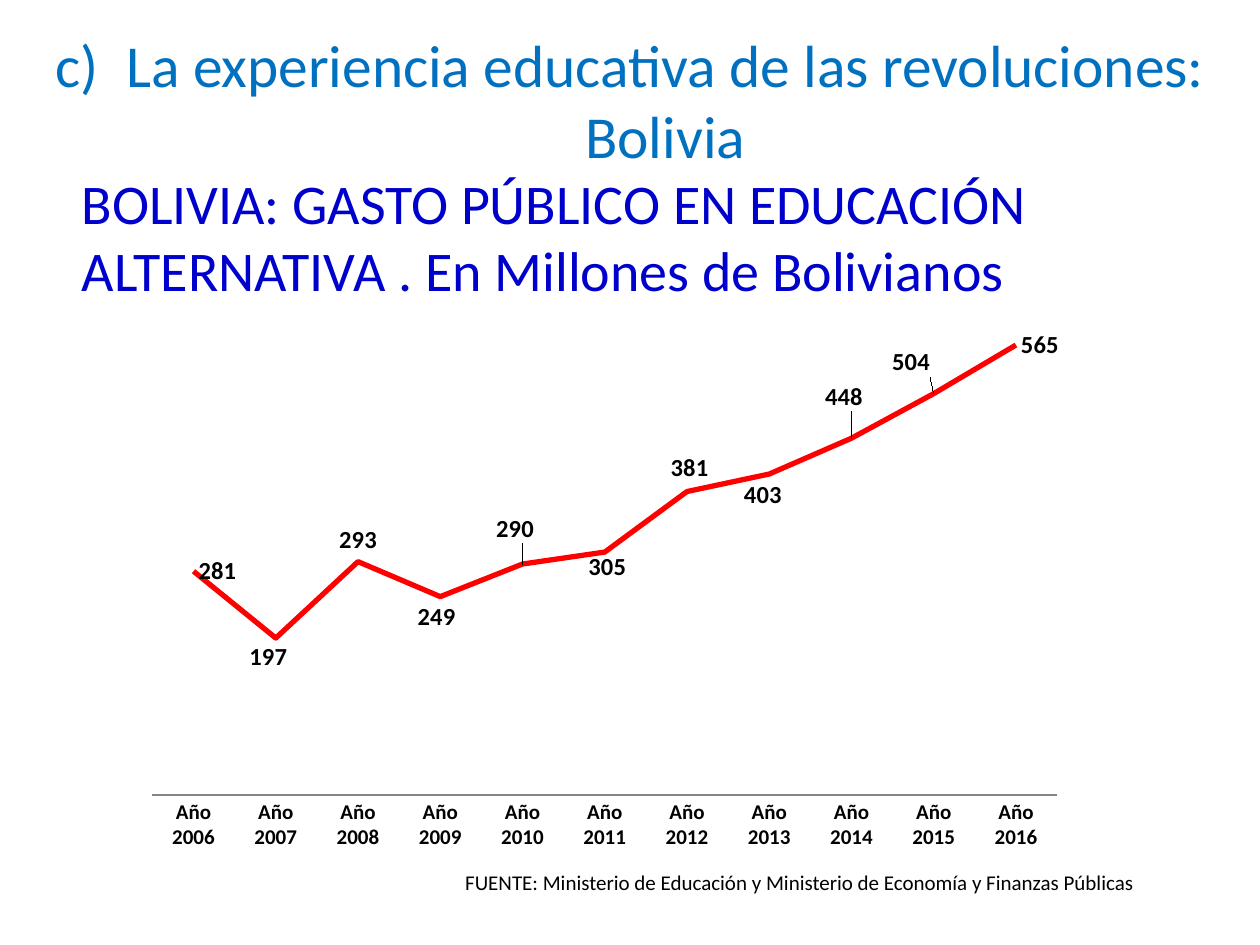
from dataclasses import dataclass

from lxml import etree
from pptx import Presentation
from pptx.chart.data import CategoryChartData
from pptx.dml.color import RGBColor
from pptx.enum.chart import XL_CHART_TYPE, XL_LABEL_POSITION, XL_MARKER_STYLE, XL_TICK_MARK
from pptx.enum.text import PP_ALIGN
from pptx.oxml.ns import qn
from pptx.util import Inches, Pt

LEFT, CENTER, RIGHT = PP_ALIGN.LEFT, PP_ALIGN.CENTER, PP_ALIGN.RIGHT
LINE_STACKED = XL_CHART_TYPE.LINE_STACKED
LABEL_RIGHT = XL_LABEL_POSITION.RIGHT
NO_MARKER = XL_MARKER_STYLE.NONE
NO_TICK = XL_TICK_MARK.NONE


@dataclass(frozen=True)
class Theme:
    font: str = "Calibri"
    heading: str = "0070C0"
    title: str = "0000CC"
    text: str = "000000"
    line: str = "FF0000"
    axis: str = "868686"
    heading_size: int = 34
    title_size: int = 32
    label_size: int = 14
    small_size: int = 12
    chart_size: int = 10


THEME = Theme()
CHART_BOX = (1.06, 2.43, 7.48, 4.41)
PLOT_LAYOUT = {"x": 0.02, "y": 0.02, "w": 0.96, "h": 0.86}
SPENDING = [281, 197, 293, 249, 290, 305, 381, 403, 448, 504, 565]
YEARS = [f"Año {year}" for year in range(2006, 2017)]
LABEL_SHIFTS = [
    (-0.25, 0.15), (-0.19, -0.17), (-0.22, 0.16), (-0.25, -0.28), (-0.17, 0.12),
    (-0.17, -0.19), (-0.24, 0.17), (-0.25, -0.33), (-0.37, -0.25),
]


def set_font(font, size, color=THEME.text, bold=False):
    font.name = THEME.font
    font.size = Pt(size)
    font.bold = bold
    font.color.rgb = RGBColor.from_string(color)


def add_numbering(p, kind, start, indent):
    pPr = p._p.get_or_add_pPr()
    pPr.set("marL", str(Inches(indent)))
    pPr.set("indent", str(-Inches(indent)))
    number = etree.SubElement(pPr, qn("a:buAutoNum"))
    number.set("type", kind)
    number.set("startAt", str(start))


def add_text(slide, text, box, size, color=THEME.text, align=LEFT, number=None):
    sp = slide.shapes.add_textbox(*map(Inches, box))
    tf = sp.text_frame
    tf.word_wrap = True
    p = tf.paragraphs[0]
    p.alignment = align
    if number:
        add_numbering(p, "alphaLcParenR", number, 0.56)
    r = p.add_run()
    r.text = text
    set_font(r.font, size, color)


def make_layout(values, inner=False):
    layout = etree.Element(qn("c:layout"))
    manual = etree.SubElement(layout, qn("c:manualLayout"))
    if inner:
        etree.SubElement(manual, qn("c:layoutTarget")).set("val", "inner")
        for mode in ("xMode", "yMode"):
            etree.SubElement(manual, qn(f"c:{mode}")).set("val", "edge")
    for key, value in values.items():
        etree.SubElement(manual, qn(f"c:{key}")).set("val", f"{value:.4f}")
    return layout


def set_plot_layout(chart):
    area = chart._chartSpace.chart.plotArea
    for old in area.findall(qn("c:layout")):
        area.remove(old)
    area.insert(0, make_layout(PLOT_LAYOUT, inner=True))


def style_axes(chart):
    chart.value_axis.visible = False
    chart.value_axis.has_major_gridlines = False
    chart.value_axis.minimum_scale = 0
    chart.value_axis.maximum_scale = 600
    axis = chart.category_axis
    axis.major_tick_mark = NO_TICK
    axis.format.line.color.rgb = RGBColor.from_string(THEME.axis)
    set_font(axis.tick_labels.font, THEME.small_size, bold=True)


def label_points(series):
    labels = series.data_labels
    labels.show_value = True
    labels.position = LABEL_RIGHT
    set_font(labels.font, THEME.label_size, bold=True)
    width, height = CHART_BOX[2:]
    for i, (dx, dy) in enumerate(LABEL_SHIFTS, start=1):
        label = series.points[i].data_label
        set_font(label.font, THEME.label_size, bold=True)
        label.position = LABEL_RIGHT
    for element, (dx, dy) in zip(series._element.iter(qn("c:dLbl")), LABEL_SHIFTS):
        element.insert(1, make_layout({"x": dx / width, "y": dy / height}))


def add_spending_chart(slide):
    data = CategoryChartData()
    data.categories = YEARS
    data.add_series("Series 1", SPENDING)
    chart = slide.shapes.add_chart(LINE_STACKED, *map(Inches, CHART_BOX), data).chart
    chart.has_legend = False
    chart.has_title = False
    set_font(chart.font, THEME.chart_size)
    style_axes(chart)
    set_plot_layout(chart)
    series = chart.plots[0].series[0]
    chart.plots[0].vary_by_categories = False
    series.smooth = False
    series.marker.style = NO_MARKER
    series.format.line.color.rgb = RGBColor.from_string(THEME.line)
    series.format.line.width = Pt(3)
    label_points(series)


def main():
    prs = Presentation()
    prs.slide_width, prs.slide_height = Inches(10), Inches(7.5)
    slide = prs.slides.add_slide(prs.slide_layouts[6])
    add_text(slide, "BOLIVIA: GASTO PÚBLICO EN EDUCACIÓN ALTERNATIVA . En Millones de Bolivianos",
             (0.55, 1.29, 9.1, 0.65), THEME.title_size, THEME.title)
    add_text(slide, "La experiencia educativa de las revoluciones: Bolivia",
             (0, 0.17, 10, 1.14), THEME.heading_size, THEME.heading, CENTER, number=3)
    add_spending_chart(slide)
    add_text(slide, "FUENTE: Ministerio de Educación y Ministerio de Economía y Finanzas Públicas",
             (2.01, 6.85, 7.09, 0.3), THEME.small_size, align=RIGHT)
    prs.save("out.pptx")


if __name__ == "__main__":
    main()
